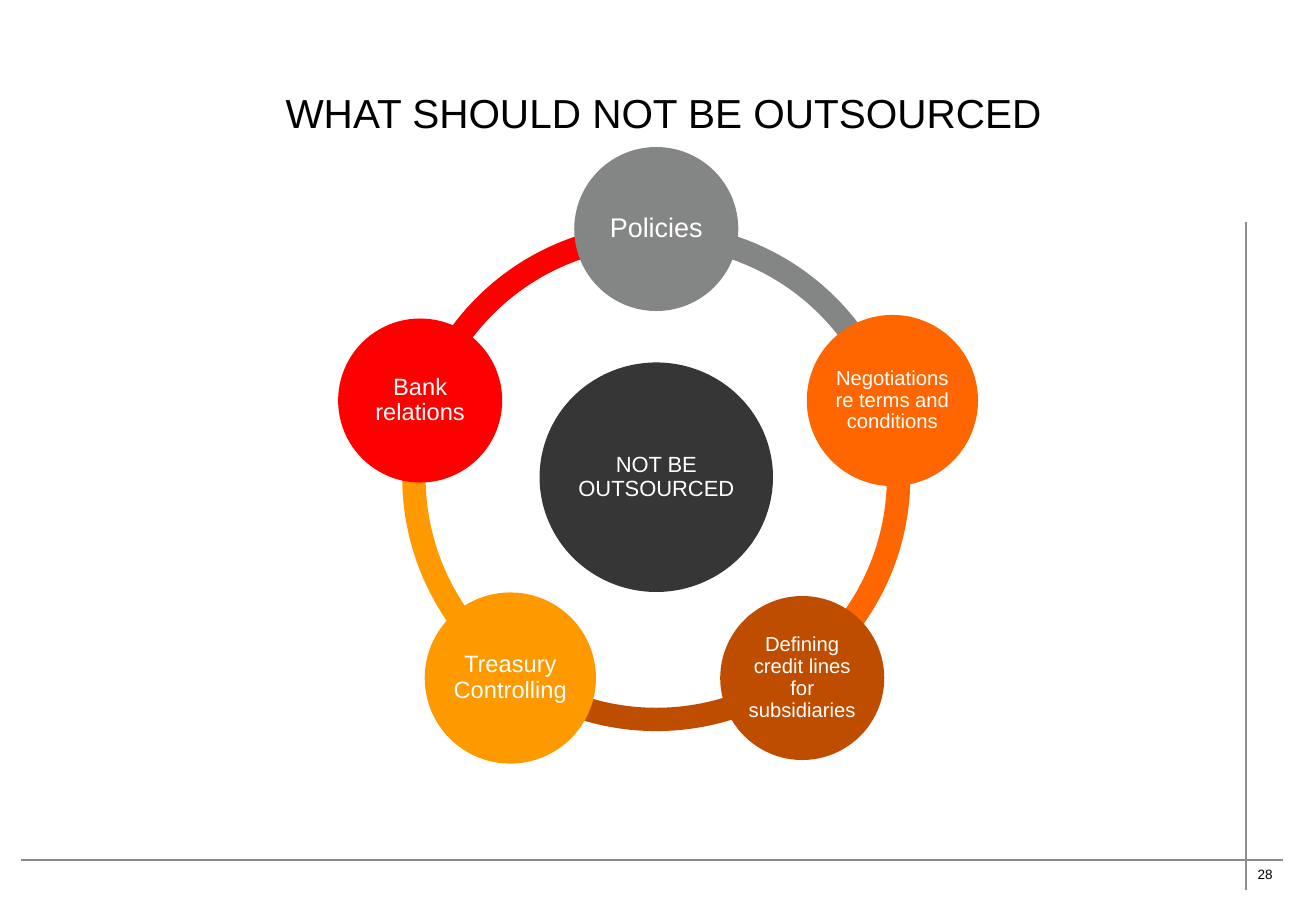
import math

import lxml.etree
import pptx
import pptx.dml.color
import pptx.enum.shapes
import pptx.enum.text
import pptx.oxml.ns
import pptx.util

Cm = pptx.util.Cm
Pt = pptx.util.Pt
RGBColor = pptx.dml.color.RGBColor
MSO_SHAPE = pptx.enum.shapes.MSO_SHAPE
MSO_ANCHOR = pptx.enum.text.MSO_ANCHOR
PP_ALIGN = pptx.enum.text.PP_ALIGN

BLACK = RGBColor(0x00, 0x00, 0x00)
WHITE = RGBColor(0xFF, 0xFF, 0xFF)
RULE_GRAY = RGBColor(0x8B, 0x8B, 0x8B)
CHARCOAL = RGBColor(0x36, 0x36, 0x36)
GRAY = RGBColor(0x84, 0x86, 0x85)
ORANGE = RGBColor(0xFF, 0x66, 0x00)
BROWN = RGBColor(0xBF, 0x4D, 0x00)
AMBER = RGBColor(0xFF, 0x99, 0x00)
RED = RGBColor(0xFF, 0x00, 0x00)

CENTER_X, CENTER_Y = 13.72, 9.98
ORBIT_RADIUS = 5.19
RING_DIAMETER = 10.62
RING_THICKNESS = 0.046
TOP_ANGLE = 270


def add_filled_shape(kind, center_x, center_y, width, height, color):
    shape = slide.shapes.add_shape(
        kind, Cm(center_x - width / 2), Cm(center_y - height / 2), Cm(width), Cm(height))
    shape.shadow.inherit = False
    shape.fill.solid()
    shape.fill.fore_color.rgb = color
    shape.line.fill.background()
    return shape


def write_text(shape, text, size, color):
    paragraph = shape.text_frame.paragraphs[0]
    paragraph.text = text
    paragraph.font.name = "Arial"
    paragraph.font.size = Pt(size)
    paragraph.font.color.rgb = color
    return paragraph


presentation = pptx.Presentation()
presentation.slide_width = Cm(27.51)
presentation.slide_height = Cm(19.05)
slide = presentation.slides.add_slide(presentation.slide_layouts[6])

page_number = slide.shapes.add_textbox(Cm(26.04), Cm(17.98), Cm(0.86), Cm(0.58))
page_number.text_frame.word_wrap = False
write_text(page_number, "28", 8, BLACK)

for start_x, start_y, end_x, end_y in [(0.43, 17.98, 26.82, 17.98), (26.04, 18.62, 26.04, 4.65)]:
    rule = slide.shapes.add_connector(
        pptx.enum.shapes.MSO_CONNECTOR.STRAIGHT, Cm(start_x), Cm(start_y), Cm(end_x), Cm(end_y))
    rule.line.color.rgb = RULE_GRAY
    rule.line.width = Pt(1)
    lxml.etree.SubElement(rule._element.spPr, pptx.oxml.ns.qn("a:effectLst"))

title = slide.shapes.add_textbox(Cm(5.72), Cm(1.07), Cm(19.89), Cm(2.54))
title.text_frame.word_wrap = True
title.text_frame.vertical_anchor = MSO_ANCHOR.MIDDLE
write_text(title, "WHAT SHOULD NOT BE OUTSOURCED", 24, BLACK)

topics = [
    ("Policies", 16, 3.43, GRAY),
    ("Negotiations re terms and conditions", 12, 3.58, ORANGE),
    ("Defining credit lines for subsidiaries", 12, 3.43, BROWN),
    ("Treasury Controlling", 14, 3.58, AMBER),
    ("Bank relations", 14, 3.43, RED),
]
step = 360 / len(topics)
circles = [("NOT BE OUTSOURCED", 13, CENTER_X, CENTER_Y, 4.88, 4.8, CHARCOAL)]

for index, (text, size, diameter, color) in enumerate(topics):
    angle = (TOP_ANGLE + index * step) % 360
    arc = add_filled_shape(
        MSO_SHAPE.BLOCK_ARC, CENTER_X, CENTER_Y, RING_DIAMETER, RING_DIAMETER, color)
    arc.adjustments[0] = angle * 0.6
    arc.adjustments[1] = (angle + step) % 360 * 0.6
    arc.adjustments[2] = RING_THICKNESS
    circle_x = CENTER_X + ORBIT_RADIUS * math.cos(math.radians(angle))
    circle_y = CENTER_Y + ORBIT_RADIUS * math.sin(math.radians(angle))
    circles.append((text, size, circle_x, circle_y, diameter, diameter, color))

for text, size, circle_x, circle_y, width, height, color in circles:
    circle = add_filled_shape(MSO_SHAPE.OVAL, circle_x, circle_y, width, height, color)
    frame = circle.text_frame
    frame.word_wrap = True
    frame.vertical_anchor = MSO_ANCHOR.MIDDLE
    frame.margin_left = frame.margin_right = Cm(0.05)
    frame.margin_top = frame.margin_bottom = Cm(0.05)
    paragraph = write_text(circle, text, size, WHITE)
    paragraph.alignment = PP_ALIGN.CENTER
    paragraph.line_spacing = 0.9

presentation.save("out.pptx")
